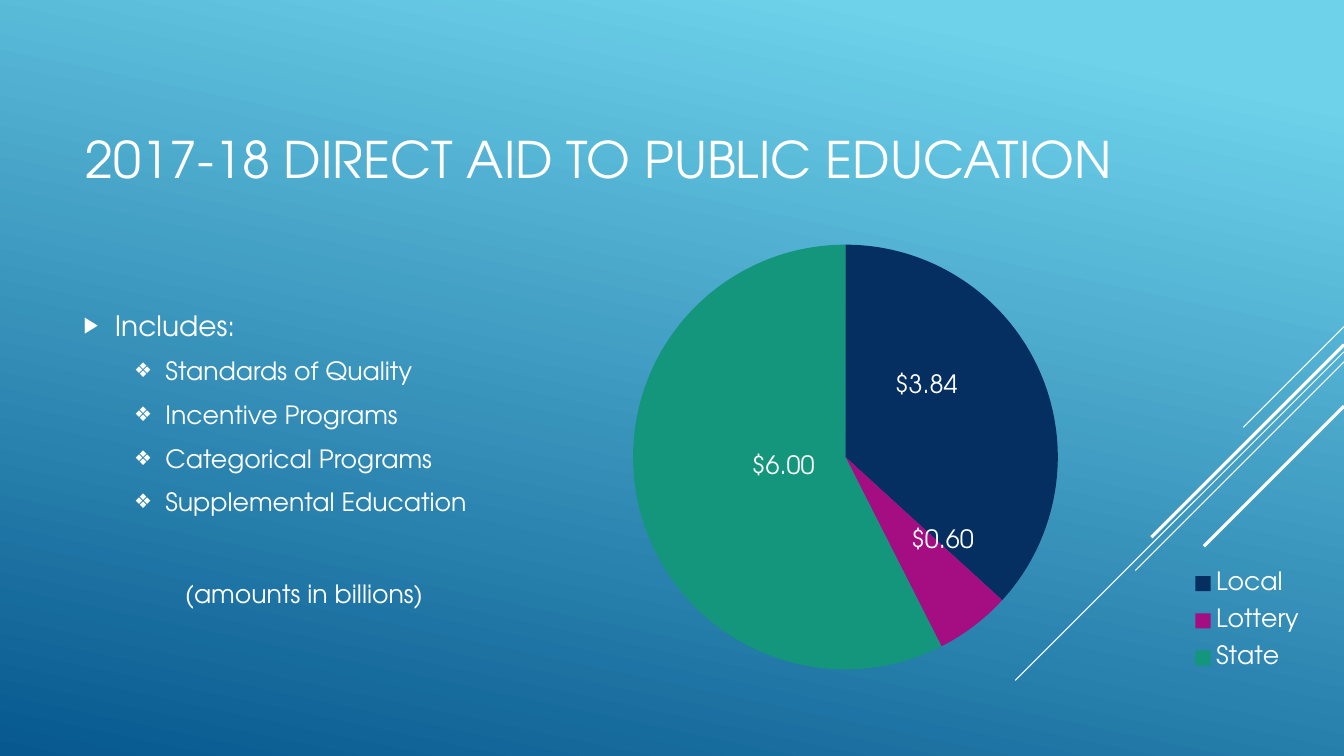
from lxml.etree import SubElement
from pptx import Presentation
from pptx.chart.data import CategoryChartData
from pptx.dml.color import RGBColor
from pptx.enum.chart import XL_CHART_TYPE, XL_LABEL_POSITION, XL_LEGEND_POSITION
from pptx.enum.shapes import MSO_CONNECTOR
from pptx.enum.text import MSO_ANCHOR, MSO_AUTO_SIZE, PP_ALIGN
from pptx.oxml import parse_xml
from pptx.oxml.ns import nsdecls, qn
from pptx.util import Inches, Pt

COLORS = {
    "white": "FFFFFF", "sky": "6ED2EB", "deep": "06588E",
    "Local": "052F61", "Lottery": "A50E82", "State": "14967C",
}
FONT = "TeX Gyre Adventor"
DOLLARS = '"$"0.00'


def style_font(font, size):
    for name, value in {"name": FONT, "size": Pt(size), "bold": False}.items():
        setattr(font, name, value)
    font.color.rgb = RGBColor.from_string(COLORS["white"])


def set_layout(parent, index, values):
    for old in parent.findall(qn("c:layout")):
        parent.remove(old)
    items = "".join(f'<c:{k} val="{v}"/>' for k, v in values.items())
    parent.insert(index, parse_xml(
        f'<c:layout {nsdecls("c")}><c:manualLayout>{items}</c:manualLayout></c:layout>'))


prs = Presentation()
prs.slide_width, prs.slide_height = Inches(13.33), Inches(7.5)
s = prs.slides.add_slide(prs.slide_layouts[1])

fill = s.background.fill
fill.gradient()
fill.gradient_angle = 258
for stop, (position, color) in zip(fill.gradient_stops, [(0.1, "sky"), (1, "deep")]):
    stop.position = position
    stop.color.rgb = RGBColor.from_string(COLORS[color])

for y, length, width in [(3.24, 1, 0.75), (3.49, 3.26, 0.75), (3.59, 2.07, 0.75),
                         (3.42, 1.91, 2.25), (4.03, 1.39, 2.25)]:
    line = s.shapes.add_connector(
        MSO_CONNECTOR.STRAIGHT, Inches(13.33), Inches(y),
        Inches(13.33 - length), Inches(y + length))
    line.line.width = Pt(width)
    line.line.color.rgb = RGBColor.from_string(COLORS["white"])
    SubElement(line._element.spPr, qn("a:effectLst"))

title, body = s.shapes.title, s.placeholders[1]
for sp, box in [(title, (0.75, 0.75, 12.11, 1.65)), (body, (0.73, 2.35, 4.57, 4.4))]:
    sp.left, sp.top, sp.width, sp.height = map(Inches, box)
    sp.text_frame.word_wrap = True
    sp.text_frame.auto_size = MSO_AUTO_SIZE.NONE
    sp.text_frame.vertical_anchor = MSO_ANCHOR.MIDDLE

p = title.text_frame.paragraphs[0]
p.alignment = PP_ALIGN.LEFT
r = p.add_run()
r.text = "2017-18 DIRECT AID TO PUBLIC EDUCATION"
style_font(r.font, 36)

tf = body.text_frame
items = [("Includes:", 0, 20, 4, "▶", 0.31)]
items += [(text, 1, 18, 3.6, "❖", 0.81) for text in (
    "Standards of Quality", "Incentive Programs",
    "Categorical Programs", "Supplemental Education")]
items += [("(amounts in billions)", 0, 18, 38, None, 0)]
for i, (text, level, size, before, bullet, margin) in enumerate(items):
    p = tf.add_paragraph() if i else tf.paragraphs[0]
    p.level = level
    p.space_before, p.space_after = Pt(before), Pt(6)
    p.alignment = PP_ALIGN.LEFT if bullet else PP_ALIGN.CENTER
    pPr = p._p.get_or_add_pPr()
    pPr.set("marL", str(Inches(margin)))
    pPr.set("indent", str(Inches(-0.31 if bullet else 0)))
    if bullet:
        SubElement(pPr, qn("a:buSzPct"), val="80000")
        SubElement(pPr, qn("a:buChar"), char=bullet)
    else:
        SubElement(pPr, qn("a:buNone"))
    r = p.add_run()
    r.text = text
    style_font(r.font, size)

data = CategoryChartData(number_format=DOLLARS)
data.categories = ["Local", "Lottery", "State"]
data.add_series("Series 1", [3.84, 0.6, 6])
chart = s.shapes.add_chart(
    XL_CHART_TYPE.PIE, Inches(4.89), Inches(2.29), Inches(8.13), Inches(4.58), data).chart
style_font(chart.font, 18)
chart.has_title = False
chart.has_legend = True
legend = chart.legend
legend.position = XL_LEGEND_POSITION.RIGHT
legend.include_in_layout = False
style_font(legend.font, 18)
edges = {"xMode": "edge", "yMode": "edge"}
set_layout(legend._element, 1, {**edges, "x": 0.85, "y": 0.71, "w": 0.14, "h": 0.27})
set_layout(chart._chartSpace.chart.plotArea, 0, {
    "layoutTarget": "inner", **edges, "x": 0.17, "y": 0.03, "w": 0.52, "h": 0.92})

plot = chart.plots[0]
plot.vary_by_categories = True
plot.has_data_labels = True
labels = plot.data_labels
labels.show_value = True
labels.show_percentage = False
labels.number_format = DOLLARS
labels.number_format_is_linked = False
style_font(labels.font, 18)
offsets = {"Local": (-0.02, -0.06), "Lottery": (0.04, 0), "State": (0.05, -0.03)}
for i, (name, (x, y)) in enumerate(offsets.items()):
    point = plot.series[0].points[i]
    point.format.fill.solid()
    point.format.fill.fore_color.rgb = RGBColor.from_string(COLORS[name])
    point.format.line.fill.background()
    label = point.data_label
    style_font(label.font, 18)
    label.position = XL_LABEL_POSITION.CENTER
    dLbl = plot.series[0]._element.findall(".//" + qn("c:dLbl"))[i]
    set_layout(dLbl, 1, {"x": x, "y": y})

prs.save("out.pptx")
